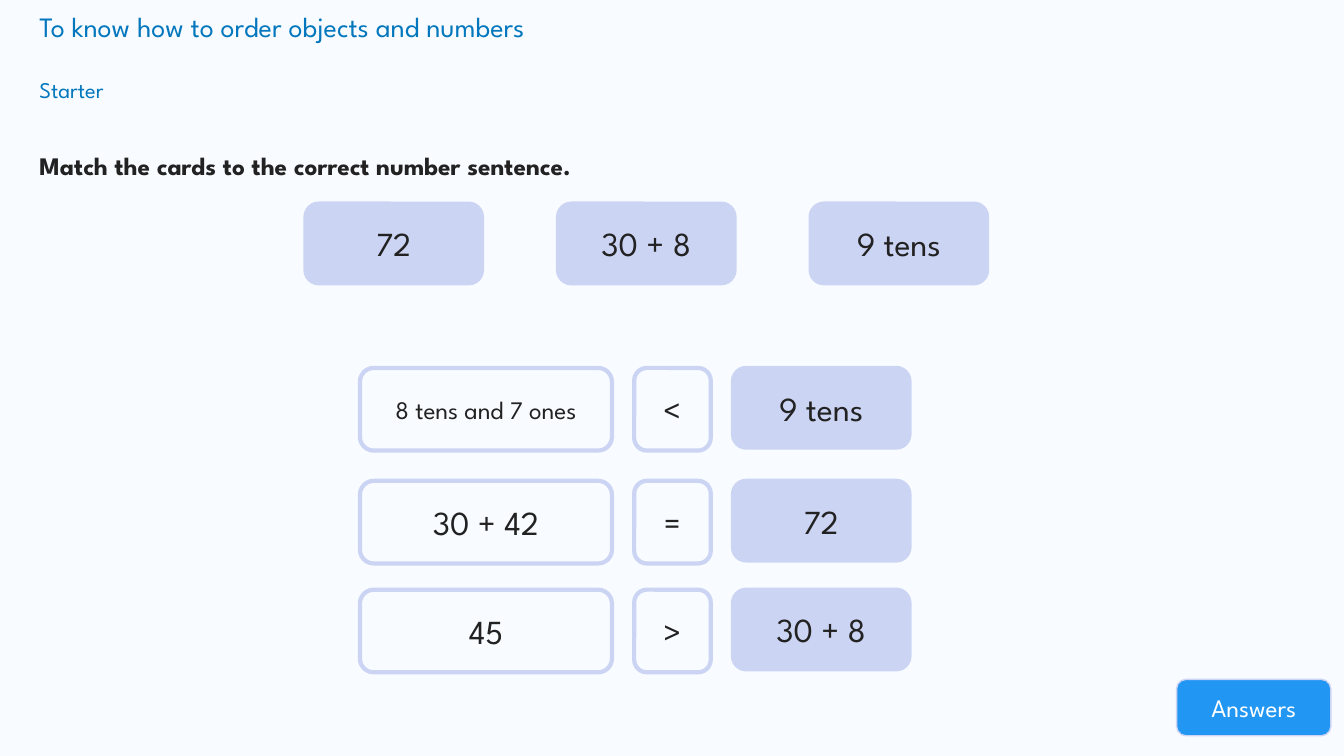
import pptx
import pptx.dml.color
import pptx.enum.shapes
import pptx.enum.text
import pptx.util

Inches = pptx.util.Inches
Pt = pptx.util.Pt
MIDDLE = pptx.enum.text.MSO_ANCHOR.MIDDLE
TOP = pptx.enum.text.MSO_ANCHOR.TOP
CENTER = pptx.enum.text.PP_ALIGN.CENTER
LEFT = pptx.enum.text.PP_ALIGN.LEFT

INK, HEADING, LILAC = "222222", "0277BD", "CCD4F4"
CARD_WIDTH, CARD_HEIGHT = 1.75, 0.79
OUTLINE_HEIGHT = 0.82

CARDS = ["72", "30 + 8", "9 tens"]
SENTENCES = [
    (0, "8 tens and 7 ones", 18, "<", "9 tens"),
    (1.12, "30 + 42", 24, "=", "72"),
    (2.2, "45", 24, ">", "30 + 8"),
]


def colour(hex_value):
    return pptx.dml.color.RGBColor.from_string(hex_value)


def apply(target, formats):
    for attribute, value in formats.items():
        setattr(target, attribute, value)


def write(shape, wording, size, ink, anchor, align, bold=False, spacing=1.0):
    frame = shape.text_frame
    apply(frame, {
        "text": wording,
        "word_wrap": True,
        "auto_size": pptx.enum.text.MSO_AUTO_SIZE.NONE,
        "vertical_anchor": anchor,
    })
    paragraph = frame.paragraphs[0]
    apply(paragraph, {"alignment": align, "line_spacing": spacing, "space_before": Pt(0)})
    font = paragraph.runs[0].font
    apply(font, {"name": "League Spartan", "size": Pt(size), "bold": bold})
    font.color.rgb = colour(ink)


def place_heading(placeholder, box, wording, size, ink, **formats):
    bounds = zip(("left", "top", "width", "height"), map(Inches, box))
    apply(placeholder, dict(bounds))
    write(placeholder, wording, size, ink, TOP, LEFT, **formats)


def add_card(slide, box, wording, size=24, fill=None, ink=INK, line_width=3):
    card = slide.shapes.add_shape(
        pptx.enum.shapes.MSO_SHAPE.ROUNDED_RECTANGLE, *map(Inches, box))
    card.shadow.inherit = False
    if fill:
        card.fill.solid()
        card.fill.fore_color.rgb = colour(fill)
    else:
        card.fill.background()
    card.line.color.rgb = colour(LILAC)
    card.line.width = Pt(line_width)
    write(card, wording, size, ink, MIDDLE, CENTER)


def add_card_row(slide, left, top, width):
    step = (width - CARD_WIDTH) / (len(CARDS) - 1)
    for column, wording in enumerate(CARDS):
        add_card(slide, (left + column * step, top, CARD_WIDTH, CARD_HEIGHT),
                 wording, fill=LILAC)


def add_sentences(slide, left, top):
    for offset, amount, size, sign, answer in SENTENCES:
        row = top + offset
        add_card(slide, (left, row, 2.5, OUTLINE_HEIGHT), amount, size)
        add_card(slide, (left + 2.72, row, 0.76, OUTLINE_HEIGHT), sign)
        add_card(slide, (left + 3.7, row, CARD_WIDTH, CARD_HEIGHT), answer, fill=LILAC)


def add_headings(slide, left, top):
    objective, starter, instruction = (
        slide.shapes.title, slide.placeholders[1], slide.placeholders[3])
    place_heading(objective, (left, top, 12.34, 0.44),
                  "To know how to order objects and numbers", 20, HEADING)
    place_heading(starter, (left, top + 0.67, 2.97, 0.46), "Starter", 16, HEADING)
    place_heading(instruction, (left, top + 1.25, 12.84, 0.56),
                  "Match the cards to the correct number sentence.", 18, INK,
                  bold=True, spacing=1.5)
    for unused in (2, 4):
        element = slide.placeholders[unused].element
        element.getparent().remove(element)


def build_starter_slide(deck):
    slide = deck.slides.add_slide(deck.slide_layouts.get_by_name("Comparison"))
    slide.background.fill.solid()
    slide.background.fill.fore_color.rgb = colour("F8FBFF")
    add_headings(slide, 0.29, 0.04)
    add_card_row(slide, 3.03, 2.02, 6.76)
    add_sentences(slide, 3.57, 3.65)
    add_card(slide, (11.67, 6.74, 1.53, 0.56), "Answers", 18,
             fill="2196F3", ink="FFFFFF", line_width=1)


def main():
    deck = pptx.Presentation()
    apply(deck, {"slide_width": Inches(13.33), "slide_height": Inches(7.5)})
    build_starter_slide(deck)
    deck.save("out.pptx")


if __name__ == "__main__":
    main()
